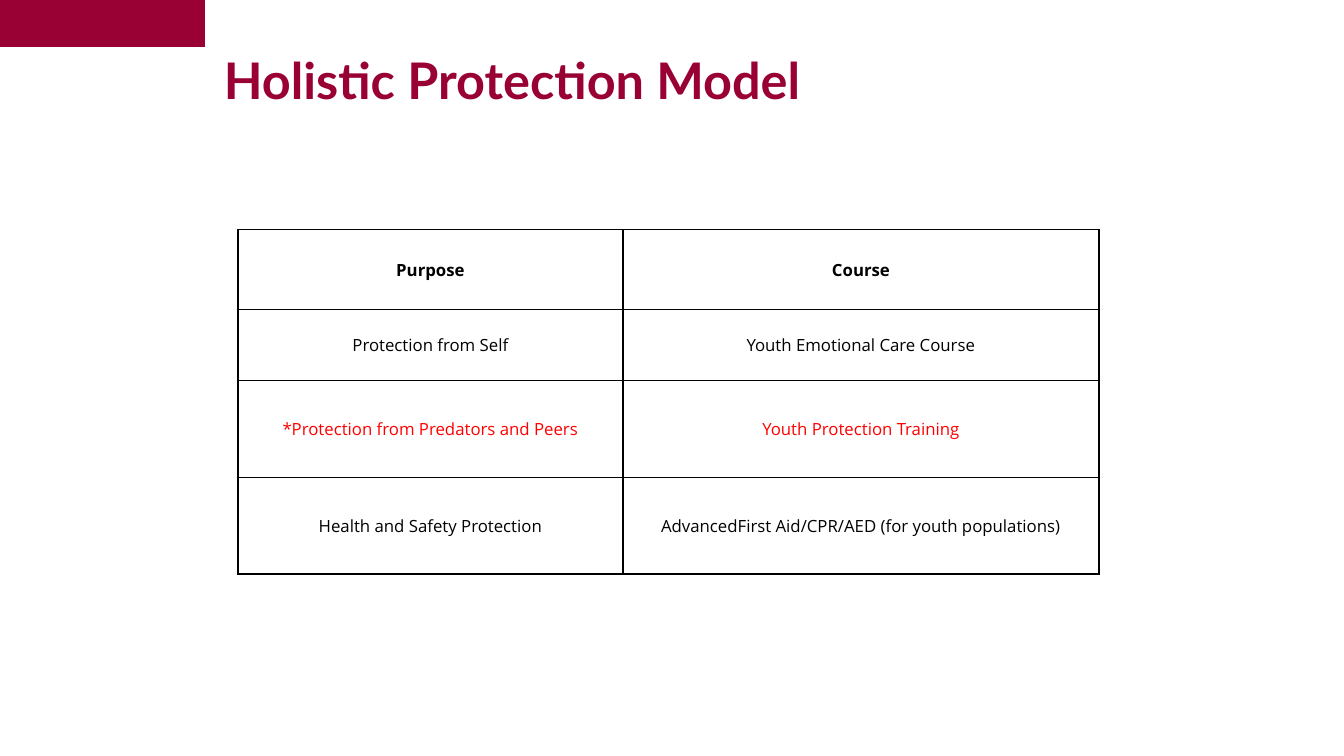
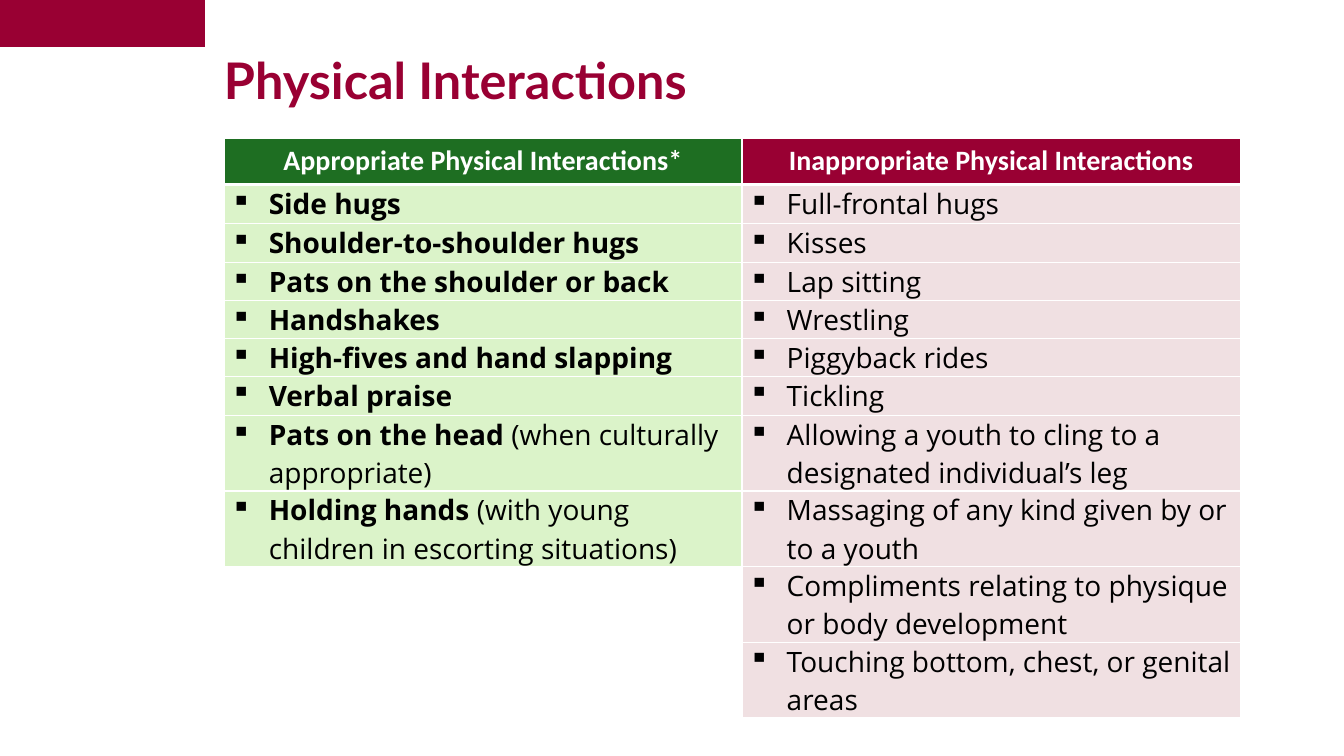
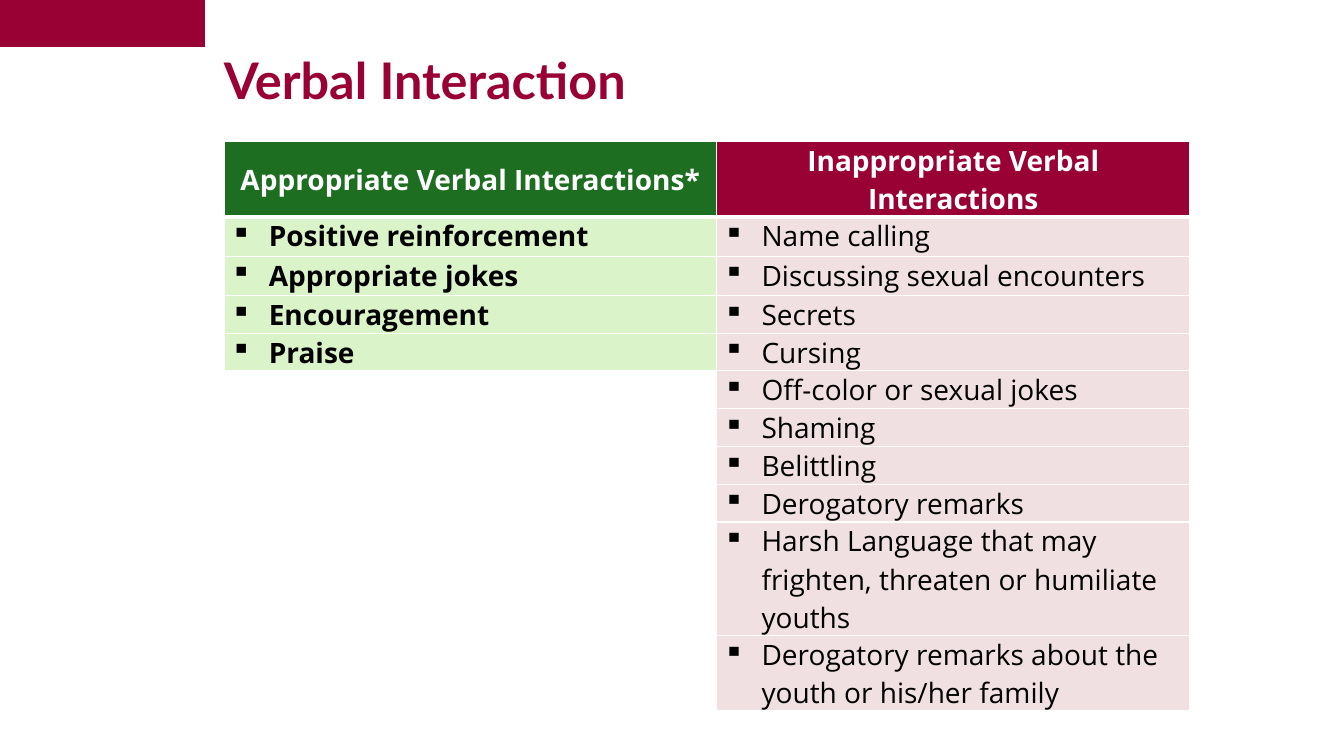
from itertools import zip_longest

from lxml.etree import SubElement
from pptx import Presentation
from pptx.dml.color import RGBColor
from pptx.enum.shapes import MSO_SHAPE
from pptx.enum.text import MSO_ANCHOR, PP_ALIGN
from pptx.oxml.ns import qn
from pptx.util import Pt

CRIMSON = "990033"
GREEN = "1E6E22"
PALE_GREEN = "DBF3C9"
PALE_PINK = "F0E0E2"
WHITE = "FFFFFF"
BLACK = "000000"
RED = "FF0000"
BODY_FONT = "Open Sans"
CONTENT_LEFT = 160

PROTECTION_ROWS = [
    ("Purpose", "Course"),
    ("Protection from Self", "Youth Emotional Care Course"),
    ("*Protection from Predators and Peers", "Youth Protection Training"),
    ("Health and Safety Protection",
     "AdvancedFirst Aid/CPR/AED (for youth populations)"),
]

# An appropriate interaction is a bold phrase and an optional plain remark.
PHYSICAL_APPROPRIATE = [
    ("Side hugs",),
    ("Shoulder-to-shoulder hugs",),
    ("Pats on the shoulder or back",),
    ("Handshakes",),
    ("High-fives and hand slapping",),
    ("Verbal praise",),
    ("Pats on the head ", "(when culturally appropriate)"),
    ("Holding hands ", "(with young children in escorting situations)"),
]
PHYSICAL_INAPPROPRIATE = [
    "Full-frontal hugs",
    "Kisses",
    "Lap sitting",
    "Wrestling",
    "Piggyback rides",
    "Tickling",
    "Allowing a youth to cling to a designated individual’s leg",
    "Massaging of any kind given by or to a youth",
    "Compliments relating to physique or body development",
    "Touching bottom, chest, or genital areas",
]
VERBAL_APPROPRIATE = [
    ("Positive reinforcement",),
    ("Appropriate jokes",),
    ("Encouragement",),
    ("Praise",),
]
VERBAL_INAPPROPRIATE = [
    "Name calling",
    "Discussing sexual encounters",
    "Secrets",
    "Cursing",
    "Off-color or sexual jokes",
    "Shaming",
    "Belittling",
    "Derogatory remarks",
    "Harsh Language that may frighten, threaten or humiliate youths",
    "Derogatory remarks about the youth or his/her family",
]


def color(value):
    return RGBColor.from_string(value)


def add_span(para, text, size=20, font=BODY_FONT, fill=BLACK, bold=False):
    span = para.add_run()
    span.text = text
    span.font.size = Pt(size)
    span.font.name = font
    span.font.bold = bold
    span.font.color.rgb = color(fill)


def add_bullet(para):
    properties = para._p.get_or_add_pPr()
    properties.set("marL", str(Pt(27)))
    properties.set("indent", str(-Pt(27)))
    SubElement(properties, qn("a:buChar"), char="▪")


def style_cell(cell, fill, line, margins, anchor=MSO_ANCHOR.TOP, top=1, bottom=1):
    """Set fill, insets (sides, ends), anchor and border widths of a cell."""
    sides, ends = margins
    cell.margin_left = cell.margin_right = Pt(sides)
    cell.margin_top = cell.margin_bottom = Pt(ends)
    cell.vertical_anchor = anchor
    properties = cell._tc.get_or_add_tcPr()
    for tag, width in (("lnL", 1), ("lnR", 1), ("lnT", top), ("lnB", bottom)):
        border = SubElement(properties, qn(f"a:{tag}"), w=str(Pt(width)))
        paint = SubElement(border, qn("a:solidFill"))
        SubElement(paint, qn("a:srgbClr"), val=line)
    cell.fill.solid()
    cell.fill.fore_color.rgb = color(fill)


def add_grid(page, left, top, widths, heights):
    """Add an unbanded table with the given column widths and row heights."""
    frame = page.shapes.add_table(
        len(heights), len(widths), Pt(left), Pt(top),
        Pt(sum(widths)), Pt(sum(heights)))
    table = frame.table
    table.first_row = table.horz_banding = False
    for column, width in zip(table.columns, widths):
        column.width = Pt(width)
    for row, height in zip(table.rows, heights):
        row.height = Pt(height)
    return table


def add_page(deck, title):
    """Add a slide with the corner band and its title."""
    page = deck.slides.add_slide(deck.slide_layouts[6])
    band = page.shapes.add_shape(
        MSO_SHAPE.RECTANGLE, 0, 0, Pt(146.4), Pt(33.6))
    band.shadow.inherit = False
    band.fill.solid()
    band.fill.fore_color.rgb = color(CRIMSON)
    band.line.fill.background()

    box = page.shapes.add_textbox(Pt(CONTENT_LEFT), Pt(34.6), Pt(768), Pt(49.7))
    frame = box.text_frame
    frame.word_wrap = True
    frame.margin_left = frame.margin_right = 0
    frame.margin_top = frame.margin_bottom = 0
    frame.vertical_anchor = MSO_ANCHOR.MIDDLE
    para = frame.paragraphs[0]
    para.line_spacing = 0.9
    add_span(para, title, size=36, font="Lato", fill=CRIMSON, bold=True)
    return page


def add_protection_table(page):
    table = add_grid(page, 170, 164, [275, 340], [57, 51, 69, 69])
    for row, texts in enumerate(PROTECTION_ROWS):
        for column, text in enumerate(texts):
            cell = table.cell(row, column)
            style_cell(cell, WHITE, BLACK, (7.2, 7.2), MSO_ANCHOR.MIDDLE)
            para = cell.text_frame.paragraphs[0]
            para.alignment = PP_ALIGN.CENTER
            add_span(para, text, size=12, bold=row == 0,
                     fill=RED if row == 2 else BLACK)


def add_bullet_cell(cell, spans, fill, first):
    """Fill a body cell; spans are (text, bold) pairs, none for a blank cell."""
    style_cell(cell, fill if spans else WHITE, WHITE, (5, 0),
               top=3 if first else 1)
    para = cell.text_frame.paragraphs[0]
    if spans:
        add_bullet(para)
    for text, bold in spans:
        add_span(para, text, bold=bold)


def add_comparison(page, kind, top, widths, heights, appropriate,
                   inappropriate, header_font=BODY_FONT):
    table = add_grid(page, CONTENT_LEFT, top, widths, heights)
    headers = [(f"Appropriate {kind} Interactions*", GREEN),
               (f"Inappropriate {kind} Interactions", CRIMSON)]
    for column, (text, fill) in enumerate(headers):
        cell = table.cell(0, column)
        style_cell(cell, fill, WHITE, (5, 0), MSO_ANCHOR.MIDDLE, bottom=3)
        para = cell.text_frame.paragraphs[0]
        para.alignment = PP_ALIGN.CENTER
        add_span(para, text, font=header_font, fill=WHITE, bold=True)

    pairs = zip_longest(appropriate, inappropriate, fillvalue=())
    for row, (good, bad) in enumerate(pairs, start=1):
        good_spans = [(text, part == 0) for part, text in enumerate(good)]
        add_bullet_cell(table.cell(row, 0), good_spans, PALE_GREEN, row == 1)
        add_bullet_cell(table.cell(row, 1), [(bad, False)], PALE_PINK, row == 1)


def main():
    deck = Presentation()
    deck.slide_width, deck.slide_height = Pt(960), Pt(540)

    add_protection_table(add_page(deck, "Holistic Protection Model"))
    add_comparison(
        add_page(deck, "Physical Interactions"), "Physical", 98.8, [370, 356],
        [33, 28, 28] + [27] * 3 + [28] + [54] * 4,
        PHYSICAL_APPROPRIATE, PHYSICAL_INAPPROPRIATE, header_font="Calibri")
    add_comparison(
        add_page(deck, "Verbal Interaction"), "Verbal", 101, [352, 338],
        [54, 28, 28] + [27] * 6 + [81, 54],
        VERBAL_APPROPRIATE, VERBAL_INAPPROPRIATE)

    deck.save("out.pptx")


if __name__ == "__main__":
    main()
